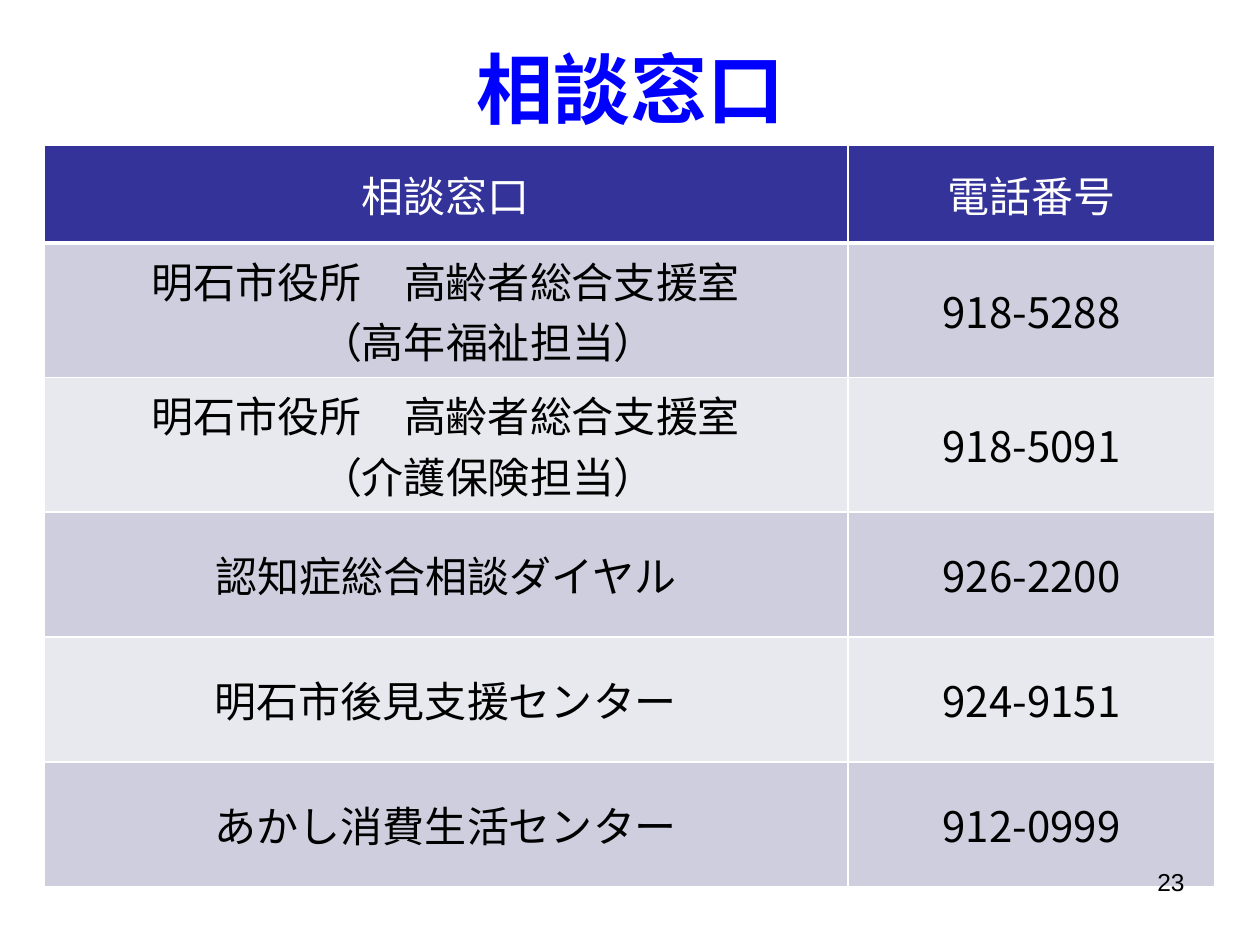
from dataclasses import dataclass

from lxml.etree import SubElement
from pptx import Presentation
from pptx.dml.color import RGBColor
from pptx.enum.text import MSO_ANCHOR, MSO_AUTO_SIZE, PP_ALIGN
from pptx.oxml.ns import qn
from pptx.util import Pt

EMU_PER_PX = 914400 / 126
WHITE = RGBColor(0xFF, 0xFF, 0xFF)
BLACK = RGBColor(0x00, 0x00, 0x00)
BLUE = RGBColor(0x00, 0x00, 0xFF)
NAVY = RGBColor(0x33, 0x33, 0x99)
LAVENDER = RGBColor(0xCE, 0xCE, 0xDE)
PALE = RGBColor(0xE8, 0xE8, 0xEF)
JP_FONT = "Noto Sans CJK JP"
COL_WIDTHS = (804, 367)
HEADER_HEIGHT = 98
ROW_HEIGHT = 125


@dataclass(frozen=True)
class Contact:
    office: str
    phone: str
    section: str = ""


CONTACTS = (
    Contact("明石市役所　高齢者総合支援室", "918-5288", "（高年福祉担当）"),
    Contact("明石市役所　高齢者総合支援室", "918-5091", "（介護保険担当）"),
    Contact("認知症総合相談ダイヤル", "926-2200"),
    Contact("明石市後見支援センター", "924-9151"),
    Contact("あかし消費生活センター", "912-0999"),
)


def px(n: int) -> int:
    return round(n * EMU_PER_PX)


def write(p, text: str, *, size=24, font=JP_FONT, color=BLACK, bold=False,
          align=PP_ALIGN.CENTER, indent=0) -> None:
    p.alignment = align
    if indent:
        p._p.get_or_add_pPr().set("marL", str(Pt(indent)))
    r = p.add_run()
    r.text = text
    r.font.size = Pt(size)
    r.font.name = font
    r.font.bold = bold
    r.font.color.rgb = color
    SubElement(r._r.get_or_add_rPr(), qn("a:ea"), typeface=font)


def set_borders(cell, top: int = 1, bottom: int = 1) -> None:
    tcPr = cell._tc.get_or_add_tcPr()
    for side, width in (("L", 1), ("R", 1), ("T", top), ("B", bottom)):
        ln = SubElement(tcPr, qn(f"a:ln{side}"), w=str(Pt(width)))
        fill = SubElement(ln, qn("a:solidFill"))
        SubElement(fill, qn("a:srgbClr"), val=str(WHITE))


def fill_cell(cell, text: str, fill: RGBColor, color: RGBColor = BLACK,
              section: str = "", top: int = 1, bottom: int = 1) -> None:
    set_borders(cell, top, bottom)
    cell.fill.solid()
    cell.fill.fore_color.rgb = fill
    cell.vertical_anchor = MSO_ANCHOR.MIDDLE
    tf = cell.text_frame
    write(tf.paragraphs[0], text, color=color)
    if section:
        write(tf.add_paragraph(), section, color=color, indent=48)


def add_title(s, text: str) -> None:
    sp = s.shapes.title
    sp.left, sp.top, sp.width, sp.height = px(64), px(35), px(1134), px(158)
    tf = sp.text_frame
    tf.auto_size = MSO_AUTO_SIZE.NONE
    tf.vertical_anchor = MSO_ANCHOR.TOP
    write(tf.paragraphs[0], text, size=44, color=BLUE, bold=True)


def add_contact_table(s) -> None:
    rows = len(CONTACTS) + 1
    height = HEADER_HEIGHT + ROW_HEIGHT * len(CONTACTS)
    table = s.shapes.add_table(rows, len(COL_WIDTHS), px(44), px(145),
                               px(sum(COL_WIDTHS)), px(height)).table
    for col, width in zip(table.columns, COL_WIDTHS):
        col.width = px(width)
    for i, row in enumerate(table.rows):
        row.height = px(ROW_HEIGHT if i else HEADER_HEIGHT)
    for j, heading in enumerate(("相談窓口", "電話番号")):
        fill_cell(table.cell(0, j), heading, NAVY, WHITE, bottom=3)
    for i, contact in enumerate(CONTACTS, 1):
        fill = LAVENDER if i % 2 else PALE
        top = 3 if i == 1 else 1
        fill_cell(table.cell(i, 0), contact.office, fill, section=contact.section, top=top)
        fill_cell(table.cell(i, 1), contact.phone, fill, top=top)


def add_page_number(s, text: str) -> None:
    tf = s.shapes.add_textbox(px(903), px(861), px(294), px(66)).text_frame
    tf.word_wrap = True
    write(tf.paragraphs[0], text, size=14, font="Arial", align=PP_ALIGN.RIGHT)


def main() -> None:
    prs = Presentation()
    prs.slide_width, prs.slide_height = px(1260), px(945)
    s = prs.slides.add_slide(prs.slide_layouts[5])
    add_title(s, "相談窓口")
    add_contact_table(s)
    add_page_number(s, "23")
    prs.save("out.pptx")


if __name__ == "__main__":
    main()
